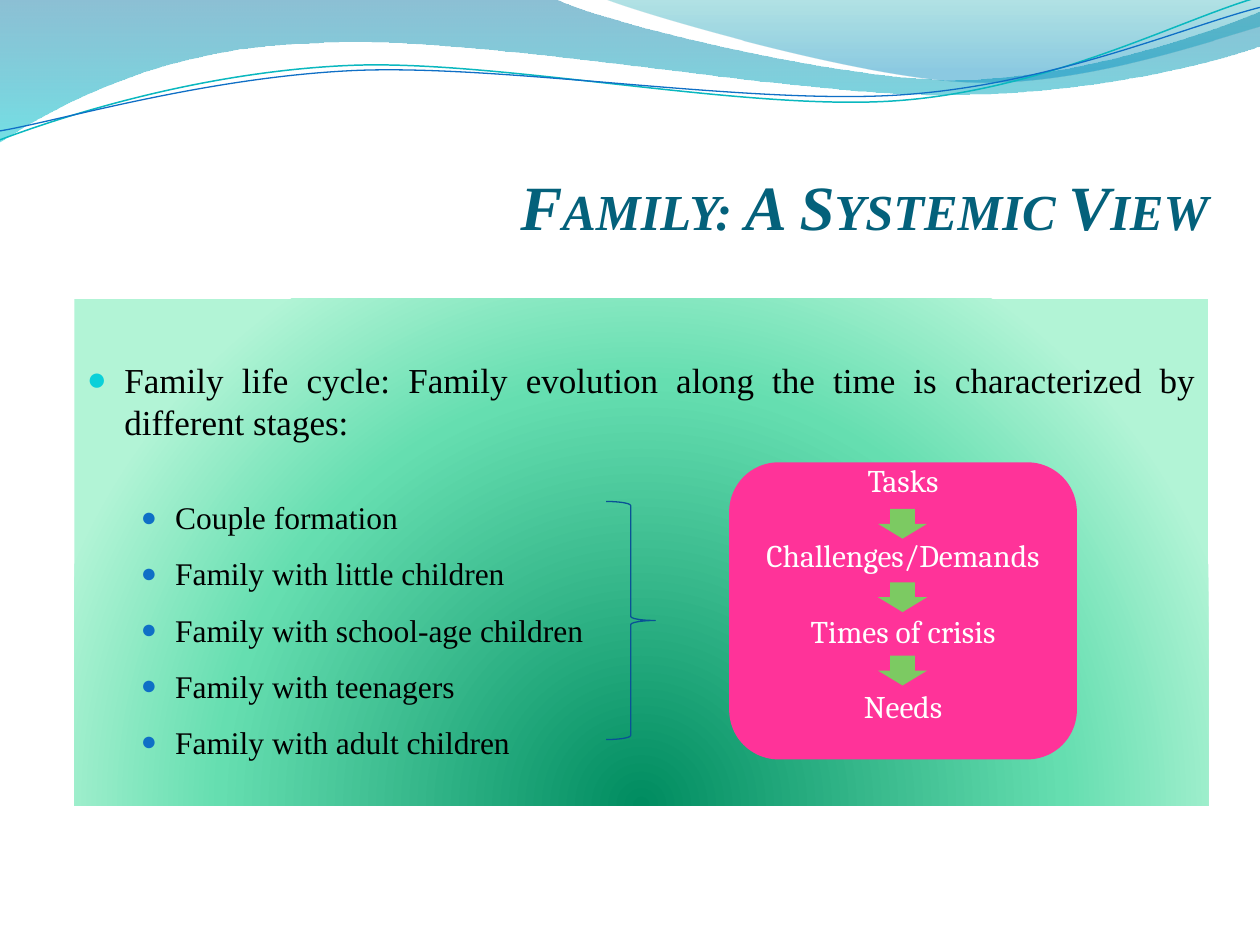
import lxml.etree
import pptx
import pptx.dml.color
import pptx.enum.shapes
import pptx.enum.text
import pptx.oxml
import pptx.oxml.ns
import pptx.util

Cm, Pt = pptx.util.Cm, pptx.util.Pt
RGB = pptx.dml.color.RGBColor
SHAPE = pptx.enum.shapes.MSO_SHAPE
ALIGN = pptx.enum.text.PP_ALIGN
ANCHOR = pptx.enum.text.MSO_ANCHOR
qn = pptx.oxml.ns.qn

BLACK = RGB(0x00, 0x00, 0x00)
WHITE = RGB(0xFF, 0xFF, 0xFF)
TITLE_TEAL = RGB(0x04, 0x61, 0x7B)
CYAN = RGB(0x0B, 0xD0, 0xD9)
CURVE_TEAL = RGB(0x0A, 0xB8, 0xBF)
BLUE = RGB(0x0F, 0x6F, 0xC6)
BRACE_BLUE = RGB(0x09, 0x52, 0x95)
PINK = RGB(0xFF, 0x33, 0x99)
ARROW_GREEN = RGB(0x7C, 0xCA, 0x62)
WAVE_BLUE, WAVE_CYAN = RGB(0x00, 0x74, 0xA1), RGB(0x00, 0xC6, 0xCF)
CREST_TEAL, CREST_BLUE = RGB(0x00, 0xA1, 0xA9), RGB(0x00, 0x8B, 0xBF)
PANEL_DARK = RGB(0x00, 0x8C, 0x60)
PANEL_MID = RGB(0x65, 0xDE, 0xB0)
PANEL_LIGHT = RGB(0xB2, 0xF4, 0xD6)

DOWNWARD = '<a:lin ang="5400000" scaled="0"/>'
FROM_BOTTOM = ('<a:path path="circle"><a:fillToRect l="50000" t="130000" '
               'r="50000" b="-30000"/></a:path>')


class SlideStyle:
    """Current slide plus the fonts used on it."""
    body_font = "Times New Roman"
    box_font = "Cambria"

    def __init__(self, slide):
        self.slide = slide

    def finish(self, shape, fill=None, line=None, width=0.75):
        shape.shadow.inherit = False
        if fill is None:
            shape.fill.background()
        else:
            shape.fill.solid()
            shape.fill.fore_color.rgb = fill
        if line is None:
            shape.line.fill.background()
        else:
            shape.line.color.rgb = line
            shape.line.width = Pt(width)
        return shape

    def gradient(self, shape, stops, direction):
        """Fill with (position %, colour, opacity %) stops."""
        marks = "".join(
            f'<a:gs pos="{pos * 1000}"><a:srgbClr val="{colour}">'
            f'<a:alpha val="{opacity * 1000}"/></a:srgbClr></a:gs>'
            for pos, colour, opacity in stops)
        filling = pptx.oxml.parse_xml(
            f'<a:gradFill {pptx.oxml.ns.nsdecls("a")} rotWithShape="1">'
            f'<a:gsLst>{marks}</a:gsLst>{direction}</a:gradFill>')
        shape.fill.solid()
        properties = shape._element.spPr
        properties.replace(properties.find(qn("a:solidFill")), filling)

    def curve(self, start, segments, closed=False, line=None, width=0.75):
        """Segments of one point are lines, of three points cubic curves."""
        builder = self.slide.shapes.build_freeform(*map(Cm, start))
        builder.add_line_segments(
            [(Cm(x), Cm(y)) for segment in segments for x, y in segment], close=closed)
        shape = builder.convert_to_shape()
        steps = iter(list(shape._element.iter(qn("a:lnTo"))))
        for segment in segments:
            first, *others = [next(steps) for _ in segment]
            if others:
                first.tag  # the first step becomes the whole curve
                bend = lxml.etree.Element(qn("a:cubicBezTo"))
                first.addprevious(bend)
                for step in (first, *others):
                    bend.append(step[0])
                    step.getparent().remove(step)
        return self.finish(shape, None, line, width)

    def shape(self, kind, left, top, width, height, fill=None, line=None):
        shape = self.slide.shapes.add_shape(
            kind, Cm(left), Cm(top), Cm(width), Cm(height))
        return self.finish(shape, fill, line)

    def frame(self, shape, anchor, top=0.13, side=0.25, bottom=0.13):
        frame = shape.text_frame
        frame.word_wrap = True
        frame.vertical_anchor = anchor
        frame.margin_left = frame.margin_right = Cm(side)
        frame.margin_top, frame.margin_bottom = Cm(top), Cm(bottom)
        return frame

    def paragraph(self, frame, text, font, size, colour, align, before=0, after=0):
        first = frame.paragraphs[0]
        paragraph = frame.add_paragraph() if first.runs else first
        paragraph.add_run().text = text
        paragraph.alignment = align
        paragraph.space_before, paragraph.space_after = Pt(before), Pt(after)
        paragraph.font.name, paragraph.font.size = font, Pt(size)
        paragraph.font.color.rgb = colour
        return paragraph

    def bullet(self, paragraph, indent, hang, colour, percent):
        properties = paragraph._p.get_or_add_pPr()
        properties.set("marL", str(Cm(indent)))
        properties.set("indent", str(-Cm(hang)))
        defaults = properties.find(qn("a:defRPr"))
        tint = lxml.etree.Element(qn("a:buClr"))
        lxml.etree.SubElement(tint, qn("a:srgbClr")).set("val", str(colour))
        defaults.addprevious(tint)
        for tag, key, value in (("a:buSzPct", "val", str(percent * 1000)),
                                ("a:buFont", "typeface", self.body_font),
                                ("a:buChar", "char", "●")):
            mark = lxml.etree.Element(qn(tag))
            mark.set(key, value)
            defaults.addprevious(mark)

    def title(self, text, left, top, width, height):
        box = self.slide.shapes.add_textbox(Cm(left), Cm(top), Cm(width), Cm(height))
        frame = self.frame(box, ANCHOR.BOTTOM, side=0, bottom=0)
        heading = self.paragraph(frame, text, self.body_font, 36, TITLE_TEAL, ALIGN.RIGHT)
        heading.font.bold = heading.font.italic = True
        heading.runs[0]._r.get_or_add_rPr().set("cap", "small")


def main():
    deck = pptx.Presentation()
    deck.slide_width, deck.slide_height = Cm(25.4), Cm(19.05)
    page = SlideStyle(deck.slides.add_slide(deck.slide_layouts[6]))

    # Waves along the top edge
    wave = page.curve((0, 0), [
        [(11.18, -0.03)],
        [(12.09, 0.43), (16.87, 1.6), (19.25, 1.6)],
        [(21.67, 1.6), (24.33, 0.66), (25.4, 0.23)],
        [(25.43, 0.91)],
        [(24.97, 1.12), (22.1, 1.93), (18.95, 1.91)],
        [(15.8, 1.91), (9.7, 0.71), (6.53, 0.86)],
        [(3.28, 0.91), (1.17, 2.11), (-0.03, 2.87)]], closed=True)
    page.gradient(wave, [(0, WAVE_BLUE, 45), (100, WAVE_CYAN, 55)], DOWNWARD)
    crest = page.curve((12.17, -0.03), [
        [(12.93, 0.28), (17.32, 1.57), (19.53, 1.65)],
        [(21.74, 1.75), (24.41, 0.81), (25.4, 0.53)],
        [(25.4, 0)]], closed=True)
    page.gradient(crest, [(0, CREST_TEAL, 30), (80, CREST_BLUE, 45)], DOWNWARD)
    page.curve((0, 2.82), [
        [(1.22, 2.36), (4.01, 1.45), (7.04, 1.32)],
        [(10.03, 1.19), (15.06, 2.26), (18.11, 2.03)],
        [(21.16, 1.8), (23.83, 0.38), (25.35, -0.05)]], line=CURVE_TEAL, width=0.85)
    page.curve((0, 2.64), [
        [(1.19, 2.44), (4.17, 1.55), (7.19, 1.42)],
        [(10.24, 1.3), (15.16, 2.13), (18.21, 1.91)],
        [(21.23, 1.7), (23.9, 0.53), (25.4, 0.15)]], line=BLUE)

    page.title("Family: A Systemic View", 1.5, 1.73, 22.86, 3.18)

    # Life cycle panel with its stages
    panel = page.shape(SHAPE.RECTANGLE, 1.5, 6.02, 22.86, 10.21)
    page.gradient(panel, [(0, PANEL_DARK, 100), (68, PANEL_MID, 100),
                          (100, PANEL_LIGHT, 100)], FROM_BOTTOM)
    cycle = page.frame(panel, ANCHOR.TOP, top=1.2)
    intro = page.paragraph(
        cycle, "Family life cycle: Family evolution along the time is "
        "characterized by different stages:", page.body_font, 20, BLACK, ALIGN.JUSTIFY)
    page.bullet(intro, 0.76, 0.76, CYAN, 95)
    stages = ["Couple formation", "Family with little children",
              "Family with school-age children", "Family with teenagers",
              "Family with adult children"]
    for number, stage in enumerate(stages):
        item = page.paragraph(cycle, stage, page.body_font, 18, BLACK, ALIGN.JUSTIFY,
                              before=4.5 if number else 32, after=6)
        page.bullet(item, 1.78, 0.69, BLUE, 85)

    # Brace leading to what every stage brings
    page.shape(SHAPE.RIGHT_BRACE, 12.22, 10.11, 0.99, 4.8, line=BRACE_BLUE)
    outcome = page.shape(SHAPE.ROUNDED_RECTANGLE, 14.7, 9.32, 7.01, 5.99, PINK)
    chain = page.frame(outcome, ANCHOR.MIDDLE, top=0, side=0, bottom=0.72)
    for number, link in enumerate(["Tasks", "Challenges/Demands",
                                   "Times of crisis", "Needs"]):
        page.paragraph(chain, link, page.box_font, 18, WHITE, ALIGN.CENTER,
                       before=21.6 if number else 0)
    for number in range(3):
        page.shape(SHAPE.DOWN_ARROW, 17.7, 10.26 + 1.48 * number, 0.99, 0.6, ARROW_GREEN)

    deck.save("out.pptx")


if __name__ == "__main__":
    main()
